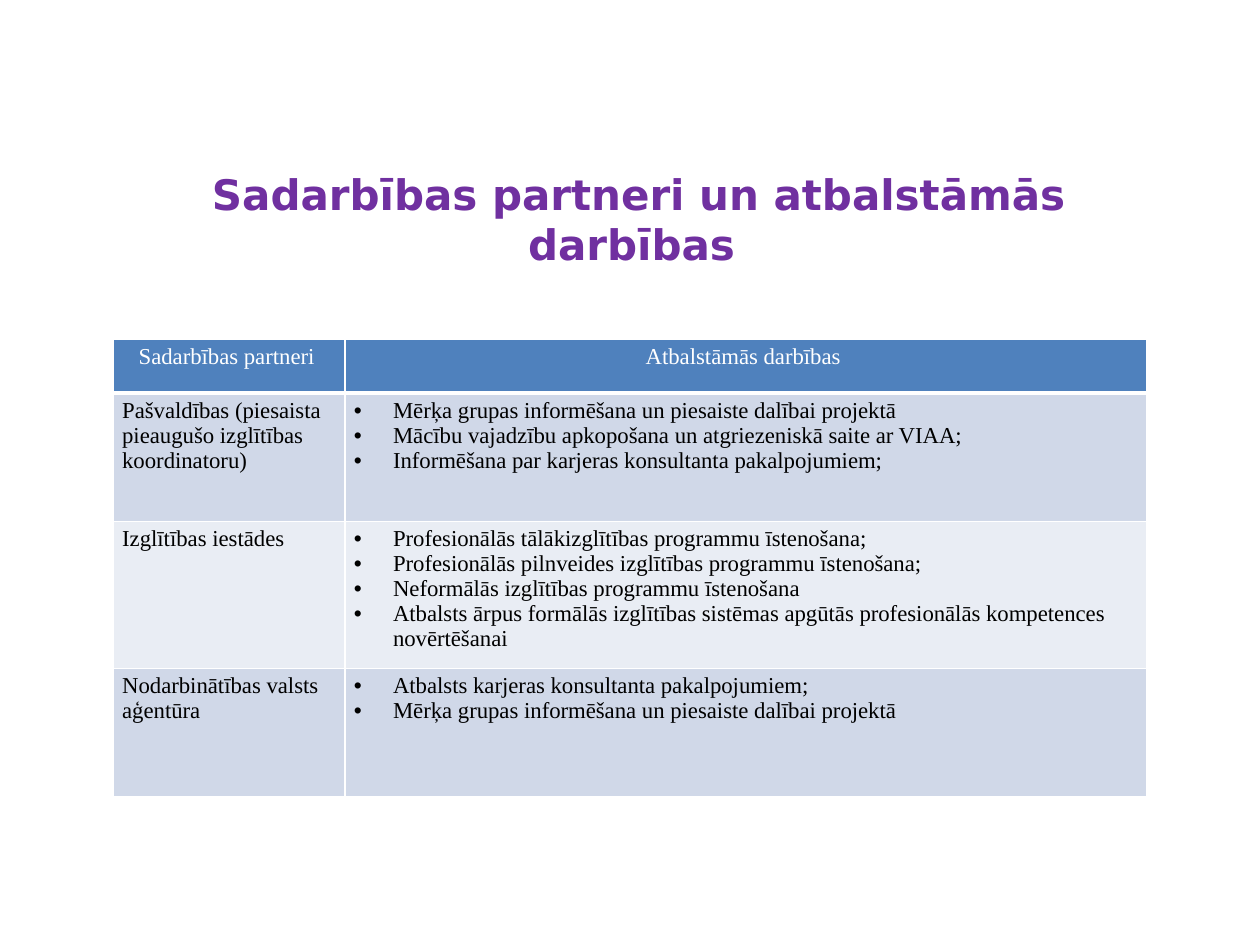
from lxml.etree import SubElement
from pptx import Presentation
from pptx.dml.color import RGBColor
from pptx.enum.text import MSO_ANCHOR, PP_ALIGN
from pptx.oxml.ns import qn
from pptx.util import Inches, Pt

WIDTH, HEIGHT = 10, 7.5
COLORS = {
    "title": "7030A0",
    "header": "4F81BD",
    "odd": "D0D8E8",
    "even": "E9EDF4",
    "light": "FFFFFF",
    "dark": "000000",
}
HEADINGS = ["Sadarbības partneri ", "Atbalstāmās darbības "]
PARTNERS = [
    ("Pašvaldības (piesaista pieaugušo izglītības koordinatoru)", [
        "Mērķa grupas informēšana un piesaiste dalībai projektā",
        "Mācību vajadzību apkopošana un atgriezeniskā saite ar VIAA;",
        "Informēšana par karjeras konsultanta pakalpojumiem;",
    ]),
    ("Izglītības iestādes", [
        "Profesionālās tālākizglītības programmu īstenošana;",
        "Profesionālās pilnveides izglītības programmu īstenošana;",
        "Neformālās izglītības programmu īstenošana",
        "Atbalsts ārpus formālās izglītības sistēmas apgūtās profesionālās kompetences novērtēšanai",
    ]),
    ("Nodarbinātības valsts aģentūra", [
        "Atbalsts karjeras konsultanta pakalpojumiem;",
        "Mērķa grupas informēšana un piesaiste dalībai projektā",
    ]),
]


class SlideBuilder:
    title_font, title_size = "DejaVu Sans", 24
    table_font, table_size = "Times New Roman", 13
    margin_x, margin_y = Inches(0.07), Inches(0.04)
    bullet_indent = Inches(0.31)

    def __init__(self, deck):
        self.deck = deck
        self.slide = deck.slides.add_slide(deck.slide_layouts[6])

    def across(self, share):
        return round(self.deck.slide_width * share)

    def down(self, share):
        return round(self.deck.slide_height * share)

    def box(self, left, top, width, height):
        return self.across(left), self.down(top), self.across(width), self.down(height)

    def text_run(self, paragraph, text, font, size, color, bold=False):
        run = paragraph.add_run()
        run.text = text
        run.font.name = font
        run.font.size = Pt(size)
        run.font.bold = bold
        run.font.color.rgb = RGBColor.from_string(COLORS[color])

    def title(self, text, *place):
        frame = self.slide.shapes.add_textbox(*self.box(*place)).text_frame
        frame.word_wrap = True
        frame.vertical_anchor = MSO_ANCHOR.MIDDLE
        heading = frame.paragraphs[0]
        heading.alignment = PP_ALIGN.CENTER
        self.text_run(heading, text, self.title_font, self.title_size, "title", True)

    def table(self, column_shares, row_shares, left, top):
        place = self.box(left, top, sum(column_shares), sum(row_shares))
        grid = self.slide.shapes.add_table(len(row_shares), len(column_shares), *place).table
        for column, share in zip(grid.columns, column_shares):
            column.width = self.across(share)
        for row, share in zip(grid.rows, row_shares):
            row.height = self.down(share)
        return grid

    def cell(self, cell, lines, fill, color="dark", centered=False, bulleted=False, rule=1):
        cell.margin_left = cell.margin_right = self.margin_x
        cell.margin_top = cell.margin_bottom = self.margin_y
        self.borders(cell, rule)
        cell.fill.solid()
        cell.fill.fore_color.rgb = RGBColor.from_string(COLORS[fill])
        frame = cell.text_frame
        for index, line in enumerate(lines):
            paragraph = frame.add_paragraph() if index else frame.paragraphs[0]
            paragraph.alignment = PP_ALIGN.CENTER if centered else PP_ALIGN.LEFT
            if bulleted:
                self.bullet(paragraph)
            self.text_run(paragraph, line, self.table_font, self.table_size, color)

    def borders(self, cell, bottom):
        properties = cell._tc.get_or_add_tcPr()
        for side, points in {"lnL": 1, "lnR": 1, "lnT": 1, "lnB": bottom}.items():
            edge = SubElement(properties, qn(f"a:{side}"), w=str(Pt(points)))
            paint = SubElement(edge, qn("a:solidFill"))
            SubElement(paint, qn("a:srgbClr"), val=COLORS["light"])

    def bullet(self, paragraph):
        properties = paragraph._p.get_or_add_pPr()
        properties.set("marL", str(self.bullet_indent))
        properties.set("indent", str(-self.bullet_indent))
        SubElement(properties, qn("a:buFont"), typeface="Arial")
        SubElement(properties, qn("a:buChar"), char="•")


def main():
    deck = Presentation()
    deck.slide_width, deck.slide_height = Inches(WIDTH), Inches(HEIGHT)
    builder = SlideBuilder(deck)
    builder.title("Sadarbības partneri un atbalstāmās darbības ",
                  0.76 / WIDTH, 1.19 / HEIGHT, 8.62 / WIDTH, 1.09 / HEIGHT)

    column_shares = [width / WIDTH for width in (1.84, 6.36)]
    row_shares = [height / HEIGHT for height in (0.43, 1.02, 1.14, 1.02)]
    grid = builder.table(column_shares, row_shares, 0.9 / WIDTH, 2.69 / HEIGHT)
    for column, heading in enumerate(HEADINGS):
        builder.cell(grid.cell(0, column), [heading], "header", "light", centered=True, rule=3)
    for row, (partner, activities) in enumerate(PARTNERS, start=1):
        band = "odd" if row % 2 else "even"
        builder.cell(grid.cell(row, 0), [partner], band)
        builder.cell(grid.cell(row, 1), activities, band, bulleted=True)

    deck.save("out.pptx")


if __name__ == "__main__":
    main()
